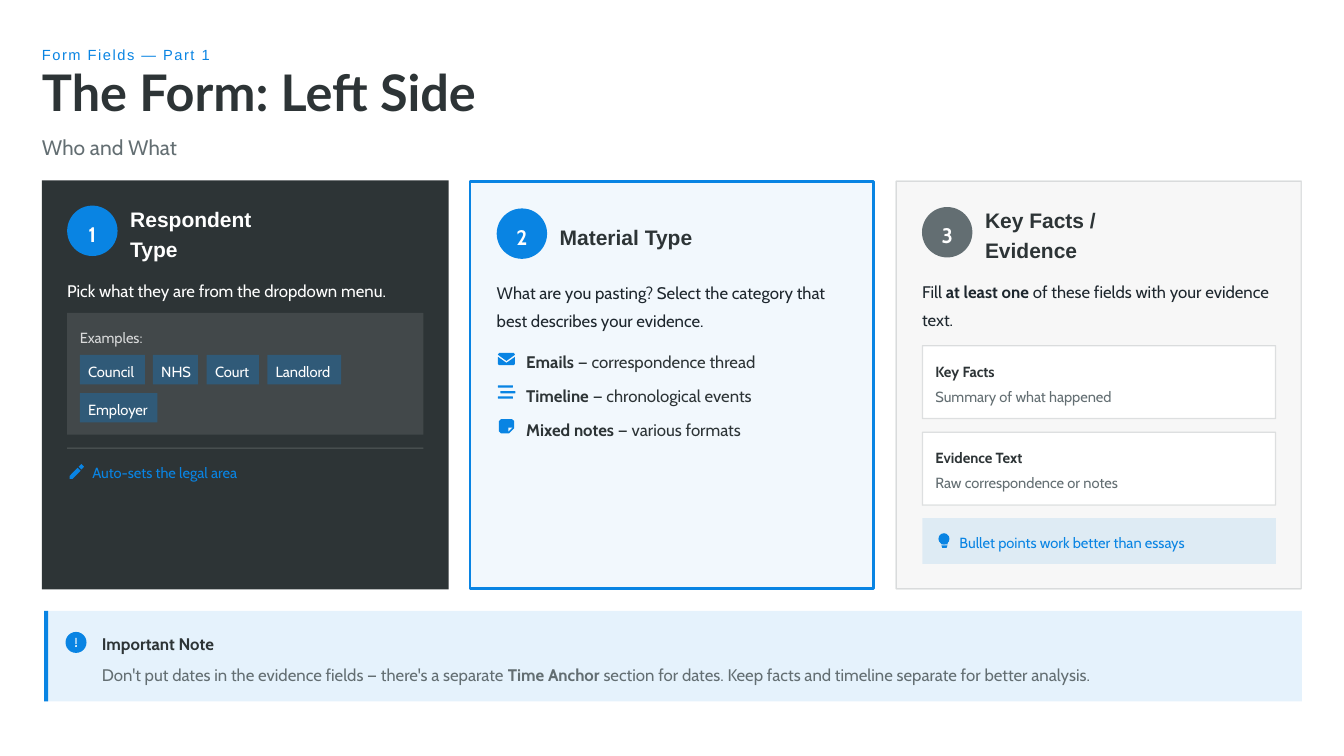
from pptx import Presentation
from pptx.util import Pt
from pptx.dml.color import RGBColor
from pptx.enum.shapes import MSO_SHAPE as Kind
from pptx.enum.text import PP_ALIGN as Align, MSO_ANCHOR as Anchor
from pptx.oxml.ns import qn
from lxml.etree import SubElement

BLUE = RGBColor(0x09, 0x84, 0xE3)
DARK = RGBColor(0x2D, 0x34, 0x36)
INK = RGBColor(0x1E, 0x27, 0x2E)
GRAY = RGBColor(0x63, 0x6E, 0x72)
WHITE = RGBColor(0xFF, 0xFF, 0xFF)
PALE = RGBColor(0xF3, 0xF9, 0xFE)
MIST = RGBColor(0xE6, 0xF3, 0xFC)

deck = Presentation()
deck.slide_width, deck.slide_height = Pt(960), Pt(540)
slide = deck.slides.add_slide(deck.slide_layouts[6])
shapes = slide.shapes


def draw(kind, x, y, w, h, fill, alpha=100, line=None, width=1, faint=100):
    item = shapes.add_shape(kind, Pt(x), Pt(y), Pt(w), Pt(h))
    item.shadow.inherit = False
    item.fill.solid()
    item.fill.fore_color.rgb = fill
    if line is None:
        item.line.fill.background()
    else:
        item.line.color.rgb = line
        item.line.width = Pt(width)
    for part, share in (("", alpha), ("a:ln/", faint)):
        for tone in item._element.xpath(f"./p:spPr/{part}a:solidFill/a:srgbClr"):
            if share < 100:
                SubElement(tone, qn("a:alpha")).set("val", str(share * 1000))
    return item


def write(x, y, w, h, parts, size, color, gap=1.2, font="Cabin", align=Align.LEFT):
    box = shapes.add_textbox(Pt(x), Pt(y), Pt(w), Pt(h))
    frame = box.text_frame
    frame.word_wrap = True
    frame.vertical_anchor = Anchor.MIDDLE
    frame.margin_left = frame.margin_right = 0
    frame.margin_top = frame.margin_bottom = 0
    para = frame.paragraphs[0]
    para.alignment = align
    para.line_spacing = gap
    for words, bold in parts:
        run = para.add_run()
        run.text = words
        run.font.name, run.font.size = font, Pt(size)
        run.font.bold = bold
        run.font.color.rgb = color
    return box


# Title block
label = write(30, 30, 905, 15, [("Form Fields — Part 1", False)], 10.5, BLUE, font="Arial")
label.text_frame.paragraphs[0].runs[0].font._element.set("spc", "110")
write(30, 51, 918, 36, [("The Form: Left Side", True)], 36, DARK, 0.8, "Lato")
write(30, 93, 907, 21, [("Who and What", False)], 15, GRAY)

# Three cards: fill, alpha, line, line width, line alpha, badge,
# heading, heading width, heading colour, body, body height, body colour
cards = [
    (DARK, 100, None, 0, 100, BLUE, "Respondent Type", 110, WHITE,
     [("Pick what they are from the dropdown menu.", False)], 19.4, WHITE),
    (BLUE, 5, BLUE, 2, 100, BLUE, "Material Type", 110, DARK,
     [("What are you pasting? Select the category that best describes your evidence.",
       False)], 38.9, INK),
    (GRAY, 5, GRAY, 1, 20, GRAY, "Key Facts / Evidence", 110, DARK,
     [("Fill ", False), ("at least one", True),
      (" of these fields with your evidence text.", False)], 38.9, INK),
]
for i, card in enumerate(cards):
    fill, alpha, line, width, faint, badge, head, span, tint, body, high, tone = card
    x, y = 30 + 304.8 * i, 128.9
    draw(Kind.RECTANGLE, x + width / 2, y + width / 2, 290.4 - width, 292.2 - width,
         fill, alpha, line, width, faint)
    x, y = x + 18 + width, y + 18 + width
    draw(Kind.OVAL, x, y, 36, 36, badge)
    write(x, y + 8, 36, 20.6, [(str(i + 1), True)], 15, WHITE, align=Align.CENTER)
    write(x + 45, y + 8, span, 20.6, [(head, True)], 15, tint, font="Arial")
    write(x, y + 48, 259, high, body, 12, tone, 1.4)

# Card 1: example chips
draw(Kind.RECTANGLE, 48, 223.5, 254.4, 87, WHITE, 10)
hint = write(57, 232.5, 241, 15, [("Examples:", False)], 10.5, WHITE)
SubElement(hint._element.xpath(".//a:srgbClr")[0], qn("a:alpha")).set("val", "80000")
chips = [("Council", 57, 253.5, 46.5), ("NHS", 109.2, 253.5, 32.2),
         ("Court", 147.6, 253.5, 37.4), ("Landlord", 190.9, 253.5, 52.7),
         ("Employer", 57, 280.8, 55.4)]
for name, x, y, w in chips:
    draw(Kind.RECTANGLE, x, y, w, 21, BLUE, 30)
    write(x + 6, y, w, 21, [(name, False)], 10.5, WHITE)
draw(Kind.RECTANGLE, 48, 319.7, 254.4, 0.75, WHITE, 20)
write(66, 329, 241, 15, [("Auto-sets the legal area", False)], 10.5, BLUE)

# Card 2: material list
kinds = [("Emails", "correspondence thread"), ("Timeline", "chronological events"),
         ("Mixed notes", "various formats")]
for i, (name, about) in enumerate(kinds):
    write(375.9, 247.5 + 24 * i, 200, 18, [(name, True), (f" — {about}", False)], 12, DARK, 1.3)
for x, y in ((355.7, 275.3), (357.4, 279.4), (355.7, 283.2)):
    draw(Kind.ROUNDED_RECTANGLE, x, y, 10.7, 1.5, BLUE)

# Card 3: fields and tip
fields = [("Key Facts", "Summary of what happened"),
          ("Evidence Text", "Raw correspondence or notes")]
for i, (name, about) in enumerate(fields):
    y = 247 + 61.8 * i
    draw(Kind.RECTANGLE, 658.9, y, 252.2, 52, WHITE, 100, GRAY, 1, 20)
    write(668.2, y + 9.4, 238, 15, [(name, True)], 10.5, DARK)
    write(668.2, y + 27.4, 238, 15, [(about, False)], 10.5, GRAY)
draw(Kind.RECTANGLE, 658.8, 370, 252.6, 32.8, BLUE, 10)
draw(Kind.OVAL, 670.3, 380.9, 7.9, 8, BLUE)
write(685.4, 378.7, 222, 15, [("Bullet points work better than essays", False)], 10.5, BLUE)

# Important note
draw(Kind.RECTANGLE, 31.5, 436.4, 898.5, 64.6, BLUE, 10)
draw(Kind.RECTANGLE, 31.5, 436.4, 3, 64.6, BLUE)
draw(Kind.OVAL, 46.8, 451.4, 15, 15, BLUE)
draw(Kind.ROUNDED_RECTANGLE, 53.8, 455.6, 1, 4.4, MIST)
draw(Kind.OVAL, 53.6, 460.8, 1.4, 1.4, MIST)
write(72.8, 448.6, 734, 18, [("Important Note", True)], 12, DARK, 1.3)
write(72.8, 469.6, 734, 19.4, [
    ("Don't put dates in the evidence fields — there's a separate ", False),
    ("Time Anchor", True),
    (" section for dates. Keep facts and timeline separate for better analysis.", False),
], 12, GRAY, 1.4)

# Icon outlines: pencil, envelope, sticky note, bulb base
icons = [
    (BLUE, [(55.4, 334.1), (49.7, 340), (49.7, 342), (51.8, 342), (57.6, 336.2)]),
    (BLUE, [(56.2, 333.4), (58.2, 331.4), (60, 333.4), (58.2, 335.4)]),
    (BLUE, [(356.6, 252), (367, 252), (367.9, 253.4), (361.8, 257.8), (355.7, 253.4)]),
    (BLUE, [(355.7, 254.9), (361.8, 259.2), (367.9, 254.9), (367.9, 260),
            (367, 260.9), (356.6, 260.9), (355.7, 260)]),
    (BLUE, [(357.8, 299.4), (365.8, 299.4), (367.2, 300.8), (367.2, 306),
            (363.6, 309.6), (357.8, 309.6), (356.4, 308.2), (356.4, 300.8)]),
    (PALE, [(363.2, 305.4), (366, 305.4), (363.2, 308.2)]),
    (BLUE, [(671.4, 387), (677.1, 387), (676.8, 388.8), (672.5, 388.8)]),
    (BLUE, [(672.5, 389.6), (676.8, 389.6), (676.2, 391.4), (673.1, 391.4)]),
]
for fill, dots in icons:
    first, *rest = [(Pt(x), Pt(y)) for x, y in dots]
    pen = shapes.build_freeform(*first, scale=1.0)
    pen.add_line_segments(rest, close=True)
    icon = pen.convert_to_shape()
    icon.shadow.inherit = False
    icon.fill.solid()
    icon.fill.fore_color.rgb = fill
    icon.line.fill.background()

deck.save("out.pptx")
